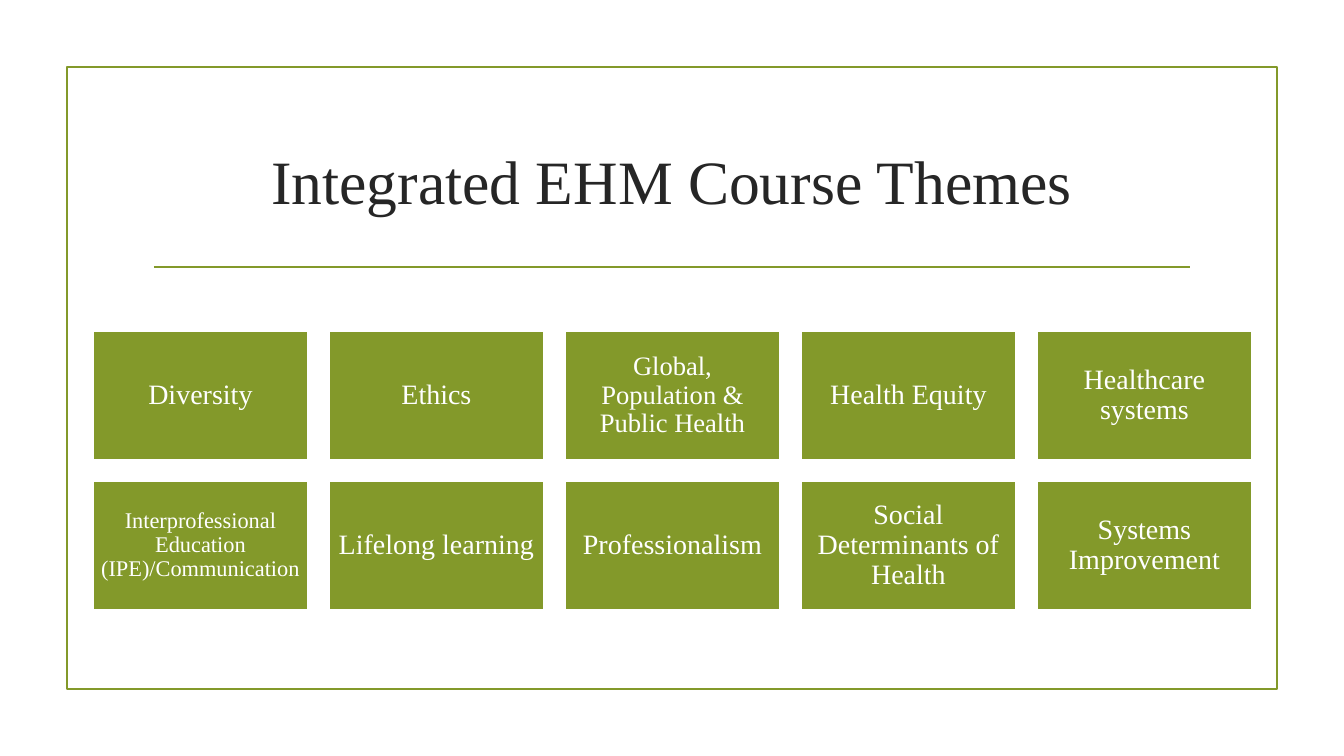
from dataclasses import dataclass

from lxml.etree import SubElement
from pptx import Presentation
from pptx.dml.color import RGBColor
from pptx.enum.shapes import MSO_CONNECTOR, MSO_SHAPE
from pptx.enum.text import MSO_ANCHOR, PP_ALIGN
from pptx.oxml.ns import qn
from pptx.util import Pt

SCALE = 914400 / 100.8


def px(n):
    return round(n * SCALE)


@dataclass(frozen=True)
class Theme:
    font: str = "Times New Roman"
    green: RGBColor = RGBColor(0x83, 0x99, 0x2A)
    white: RGBColor = RGBColor(0xFF, 0xFF, 0xFF)
    ink: RGBColor = RGBColor(0x26, 0x26, 0x26)
    title: int = 44
    label: int = 20
    snug: int = 19
    small: int = 16
    stroke: float = 1.25


def write(frame, text, *, font, size, color, inset=8, spacing=1.0):
    frame.word_wrap = True
    frame.vertical_anchor = MSO_ANCHOR.MIDDLE
    frame.margin_left = frame.margin_right = px(inset)
    frame.margin_top = frame.margin_bottom = px(inset)
    para = frame.paragraphs[0]
    para.alignment = PP_ALIGN.CENTER
    para.line_spacing = spacing
    run = para.add_run()
    run.text = text
    run.font.name = font
    run.font.size = Pt(size)
    run.font.color.rgb = color


class Painter:
    def __init__(self, slide, theme):
        self.shapes = slide.shapes
        self.theme = theme

    def rect(self, x, y, w, h, line, fill=None):
        shape = self.shapes.add_shape(MSO_SHAPE.RECTANGLE, px(x), px(y), px(w), px(h))
        shape.shadow.inherit = False
        if fill is None:
            shape.fill.background()
        else:
            shape.fill.solid()
            shape.fill.fore_color.rgb = fill
        shape.line.color.rgb = line
        shape.line.width = Pt(self.theme.stroke)
        return shape

    def rule(self, x, y, end):
        line = self.shapes.add_connector(MSO_CONNECTOR.STRAIGHT, px(x), px(y), px(end), px(y))
        line.line.color.rgb = self.theme.green
        line.line.width = Pt(self.theme.stroke)
        SubElement(line._element.spPr, qn("a:effectLst"))

    def title(self, text, x, y, w, h):
        box = self.shapes.add_textbox(px(x), px(y), px(w), px(h))
        write(box.text_frame, text, font=self.theme.font, size=self.theme.title,
              color=self.theme.ink)

    def tile(self, text, x, y, w, h, size):
        shape = self.rect(x, y, w, h, self.theme.white, self.theme.green)
        write(shape.text_frame, text, font=self.theme.font, size=size,
              color=self.theme.white, inset=round(size * 0.4), spacing=0.9)


def main():
    deck = Presentation()
    deck.slide_width, deck.slide_height = px(1344), px(756)
    theme = Theme()
    art = Painter(deck.slides.add_slide(deck.slide_layouts[6]), theme)

    art.rect(67, 67, 1210, 622, theme.green)
    art.rule(154, 267, 1190)
    art.title("Integrated EHM Course Themes", 143, 108, 1058, 144)

    topics = [
        ("Diversity", theme.label),
        ("Ethics", theme.label),
        ("Global, Population & Public Health", theme.snug),
        ("Health Equity", theme.label),
        ("Healthcare systems", theme.label),
        ("Interprofessional Education (IPE)/Communication", theme.small),
        ("Lifelong learning", theme.label),
        ("Professionalism", theme.label),
        ("Social Determinants of Health", theme.label),
        ("Systems Improvement", theme.label),
    ]
    for i, (text, size) in enumerate(topics):
        row, col = divmod(i, 5)
        art.tile(text, 93 + 236 * col, 331 + 150 * row, 215, 129, size)

    deck.save("out.pptx")


if __name__ == "__main__":
    main()
